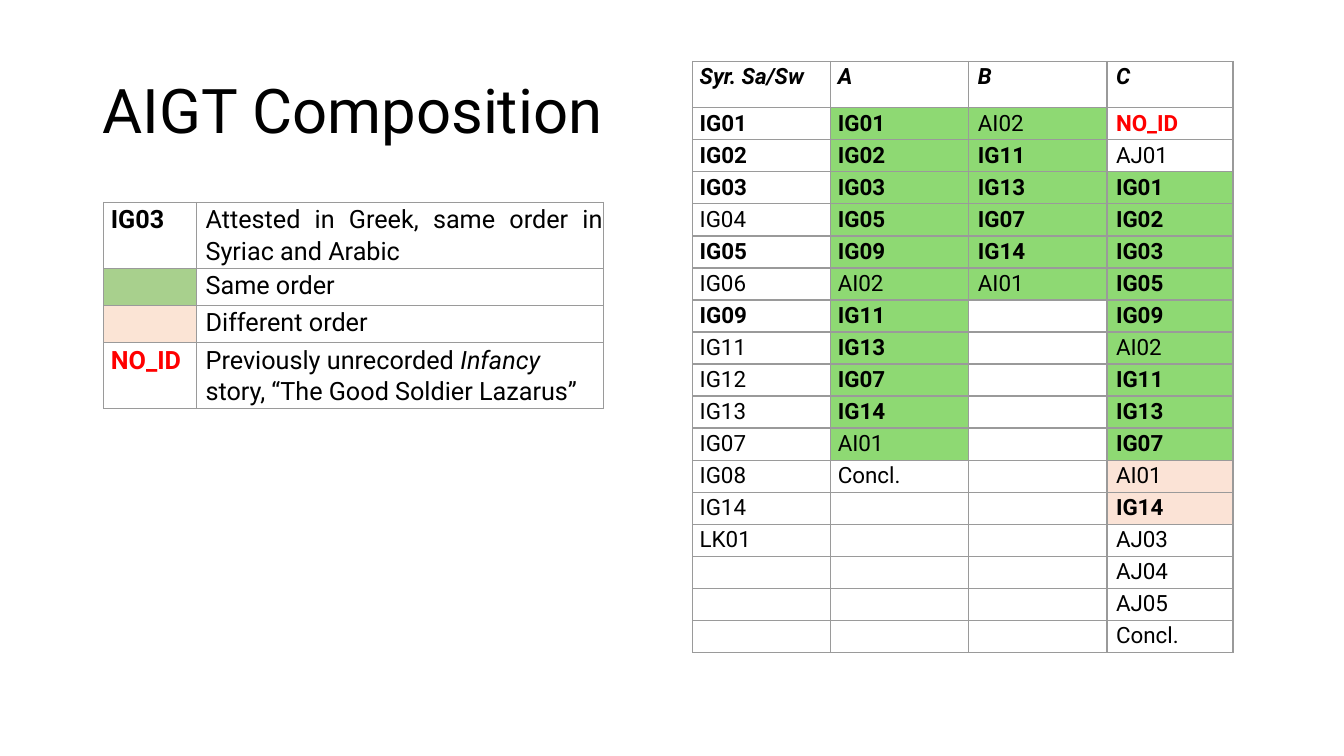
import pptx
import pptx.util
import pptx.dml.color
import pptx.enum.text
import lxml.etree
from dataclasses import dataclass

Inches = pptx.util.Inches
Pt = pptx.util.Pt
Align = pptx.enum.text.PP_ALIGN
Anchor = pptx.enum.text.MSO_ANCHOR


@dataclass(frozen=True)
class Theme:
    face: str = "Roboto"
    ink: str = "000000"
    red: str = "FF0000"
    rule: str = "9A9A9A"
    green: str = "8ED973"
    peach: str = "FBE3D6"
    sage: str = "A8D08D"
    blush: str = "FBE4D5"
    title: int = 44
    body: int = 16
    key: int = 18


THEME = Theme()

HEADS = ["Syr. Sa/Sw", "A", "B", "C"]
ORDERS = [
    "*IG01 *IG02 *IG03 IG04 *IG05 IG06 *IG09 IG11 IG12 IG13 IG07 IG08 IG14 LK01",
    "*IG01 *IG02 *IG03 *IG05 *IG09 AI02 *IG11 *IG13 *IG07 *IG14 AI01 Concl.",
    "AI02 *IG11 *IG13 *IG07 *IG14 AI01",
    "!NO_ID AJ01 *IG01 *IG02 *IG03 *IG05 *IG09 AI02 *IG11 *IG13 *IG07 AI01 *IG14 "
    "AJ03 AJ04 AJ05 Concl.",
]
FILLS = [
    (1, range(1, 12), THEME.green),
    (2, range(1, 7), THEME.green),
    (3, range(3, 12), THEME.green),
    (3, range(12, 14), THEME.peach),
]
KEYS = [
    ("*IG03", None, ["Attested in Greek, same order in Syriac and Arabic"]),
    ("", THEME.sage, ["Same order"]),
    ("", THEME.blush, ["Different order"]),
    ("!NO_ID", None,
     ["Previously unrecorded ", "/Infancy", " story, “The Good Soldier Lazarus”"]),
]
MARKS = {
    "*": {"bold": True},
    "!": {"bold": True, "color": THEME.red},
    "/": {"italic": True},
    "#": {"bold": True, "italic": True},
}


def apply(item, values):
    for name, value in values.items():
        setattr(item, name, value)


def add_run(para, text, size):
    style = {"color": THEME.ink, "bold": False, "italic": False}
    if text[0] in MARKS:
        style.update(MARKS[text[0]])
        text = text[1:]
    run = para.add_run()
    run.text = text
    color = style.pop("color")
    apply(run.font, {"name": THEME.face, "size": Pt(size), **style})
    run.font.color.rgb = pptx.dml.color.RGBColor.from_string(color)


def add_rules(cell):
    props = cell._tc.get_or_add_tcPr()
    space = "{" + props.nsmap["a"] + "}"
    for side in ("lnL", "lnR", "lnT", "lnB"):
        line = lxml.etree.SubElement(props, space + side, w=str(Pt(1)))
        solid = lxml.etree.SubElement(line, space + "solidFill")
        lxml.etree.SubElement(solid, space + "srgbClr", val=THEME.rule)


def fill_cell(cell, parts, size, indent, fill=None, align=Align.JUSTIFY):
    add_rules(cell)
    apply(cell, {
        "margin_left": Inches(0.01 + indent), "margin_right": Inches(0.01),
        "margin_top": Inches(0.01), "margin_bottom": 0,
    })
    if fill:
        cell.fill.solid()
        cell.fill.fore_color.rgb = pptx.dml.color.RGBColor.from_string(fill)
    else:
        cell.fill.background()
    para = cell.text_frame.paragraphs[0]
    apply(para, {"alignment": align, "line_spacing": 1.07, "space_after": Pt(8)})
    for part in filter(None, parts):
        add_run(para, part, size)
    if not any(parts):
        para._p.get_or_add_endParaRPr().set("sz", str(size * 100))


def add_grid(slide, box, widths, heights):
    left, top = box
    frame = slide.shapes.add_table(
        len(heights), len(widths), Inches(left), Inches(top),
        Inches(sum(widths)), Inches(sum(heights)))
    grid = frame.table
    apply(grid, {"first_row": False, "horz_banding": False})
    for col, width in zip(grid.columns, widths):
        col.width = Inches(width)
    for row, height in zip(grid.rows, heights):
        row.height = Inches(height)
    return grid


def add_title(slide, box):
    shape = slide.shapes.add_textbox(*map(Inches, box))
    frame = shape.text_frame
    apply(frame, {"word_wrap": True, "vertical_anchor": Anchor.MIDDLE})
    para = frame.paragraphs[0]
    para.line_spacing = 0.9
    add_run(para, "AIGT Composition", THEME.title)


def add_orders(slide, box):
    grid = add_grid(slide, box, [1.37, 1.37, 1.37, 1.25], [0.46] + [0.318] * 17)
    fills = {(row, col): fill for col, rows, fill in FILLS for row in rows}
    for col, (head, order) in enumerate(zip(HEADS, ORDERS)):
        texts = ["#" + head] + order.split()
        for row in range(len(grid.rows)):
            text = texts[row] if row < len(texts) else ""
            fill_cell(grid.cell(row, col), [text], THEME.body,
                      0.06 if col < 2 else 0.08, fills.get((row, col)))


def add_key(slide, box):
    grid = add_grid(slide, box, [0.92, 4.04], [0.63, 0.37, 0.37, 0.63])
    for row, (code, fill, parts) in enumerate(KEYS):
        align = Align.LEFT if len(parts) > 1 else Align.JUSTIFY
        fill_cell(grid.cell(row, 0), [code], THEME.key, 0.06, fill)
        fill_cell(grid.cell(row, 1), parts, THEME.key, 0.08, align=align)


def main():
    deck = pptx.Presentation()
    apply(deck, {"slide_width": Inches(13.33), "slide_height": Inches(7.5)})
    slide = deck.slides.add_slide(deck.slide_layouts[6])
    add_title(slide, (0.92, 0.4, 11.5, 1.45))
    add_orders(slide, (6.87, 0.61))
    add_key(slide, (1.03, 2.01))
    deck.save("out.pptx")


if __name__ == "__main__":
    main()
